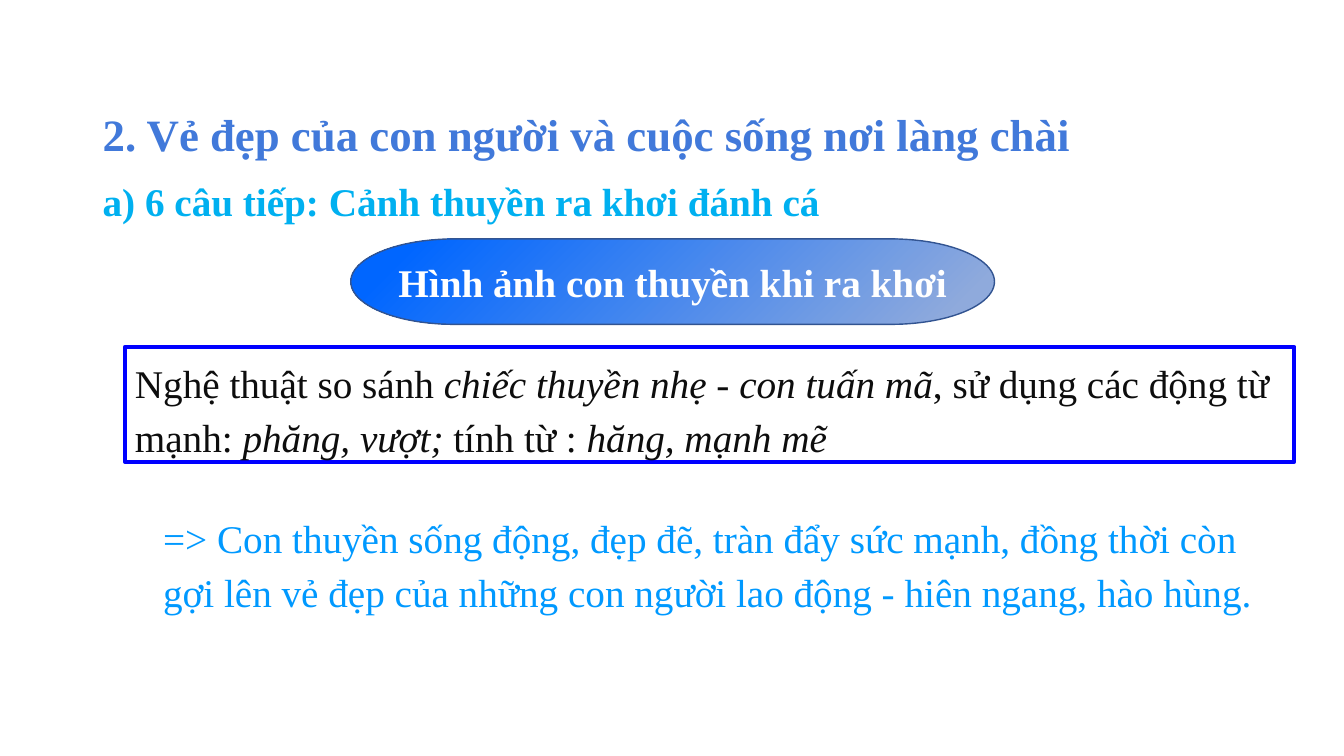
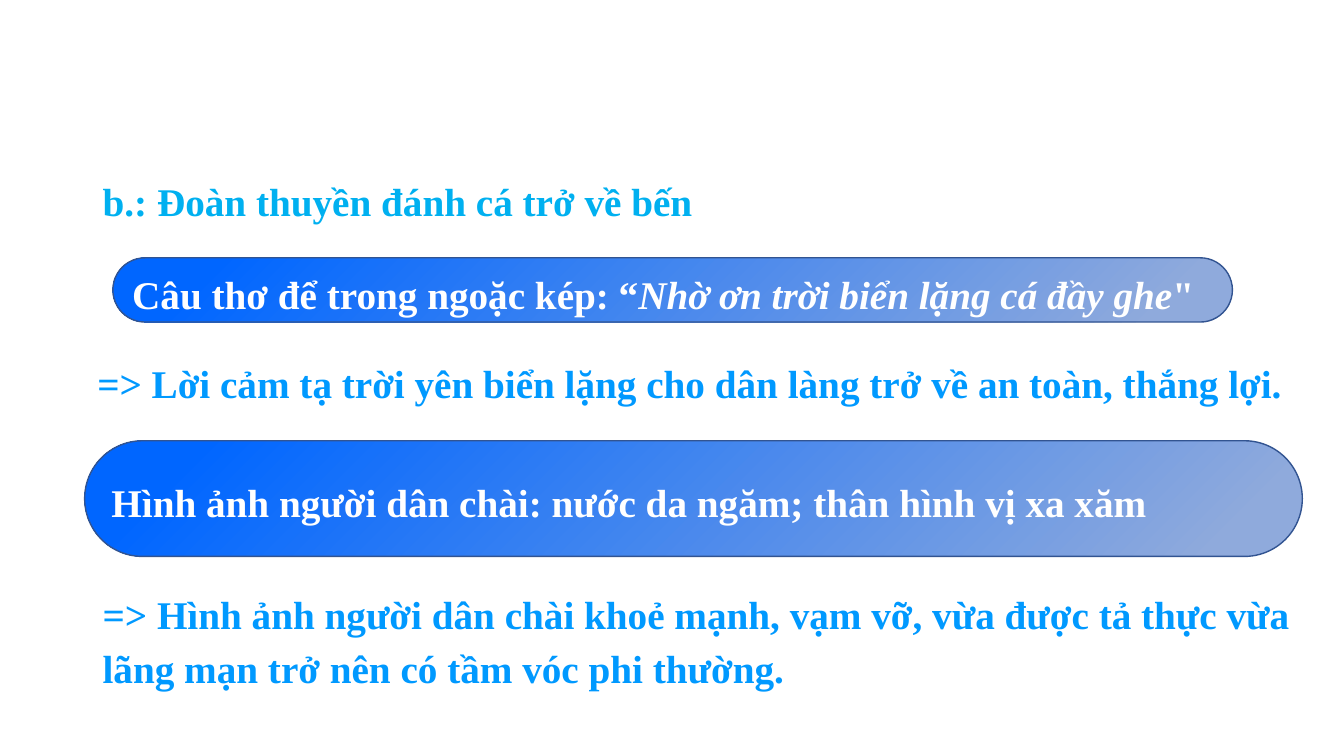
from pptx import Presentation
from pptx.dml.color import RGBColor
from pptx.enum.shapes import MSO_SHAPE
from pptx.enum.text import MSO_ANCHOR, PP_ALIGN
from pptx.util import Inches, Pt

RECT = MSO_SHAPE.RECTANGLE
ROUND = MSO_SHAPE.ROUNDED_RECTANGLE
TERMINATOR = MSO_SHAPE.FLOWCHART_TERMINATOR
LEFT, CENTER, JUSTIFY = PP_ALIGN.LEFT, PP_ALIGN.CENTER, PP_ALIGN.JUSTIFY
TOP, MIDDLE = MSO_ANCHOR.TOP, MSO_ANCHOR.MIDDLE


def rgb(value):
    return RGBColor.from_string(value)


class Deck:
    """Shared style and current slide; boxes are in percent of the slide."""

    FONT = "Times New Roman"
    TITLE, HEADING, RESULT = "4179DA", "00B0F0", "0099FF"
    INK, WHITE, FRAME, EDGE = "0D0D0D", "FFFFFF", "0000FF", "325491"
    GRADIENT = ((0.07, "8FAADC"), (0.91, "0066FF"))
    MARGIN = 6.9
    HEADING_TOP = 21.9

    def __init__(self):
        self.prs = Presentation()
        self.prs.slide_width = Inches(13.33)
        self.prs.slide_height = Inches(7.5)
        self.s = None

    def new_slide(self):
        self.s = self.prs.slides.add_slide(self.prs.slide_layouts[6])

    def box(self, x, y, w, h):
        width, height = self.prs.slide_width, self.prs.slide_height
        return [int(share * size / 100) for share, size in
                ((x, width), (y, height), (w, width), (h, height))]

    def add_text(self, sp, text, color, size=28, bold=True, align=LEFT,
                 anchor=TOP, spaced=True):
        """Fill a shape with one paragraph; *stars* enclose italics."""
        tf = sp.text_frame
        tf.word_wrap = True
        tf.vertical_anchor = anchor
        p = tf.paragraphs[0]
        p.alignment = align
        if spaced:
            p.line_spacing = 1.15
            p.space_before = p.space_after = Pt(6)
        for i, part in enumerate(text.split("*")):
            if part:
                r = p.add_run()
                r.text = part
                r.font.name = self.FONT
                r.font.size = Pt(size)
                r.font.bold = bold
                r.font.italic = i % 2 == 1
                r.font.color.rgb = rgb(color)

    def text(self, box, text, color, **style):
        sp = self.s.shapes.add_textbox(*self.box(*box))
        self.add_text(sp, text, color, **style)

    def title(self, text):
        self.text((self.MARGIN, 13.5, 74.8, 8.5), text, self.TITLE, size=32,
                  align=JUSTIFY, spaced=False)

    def heading(self, text):
        self.text((self.MARGIN, self.HEADING_TOP, 64.4, 8), text, self.HEADING)

    def result(self, box, text, bold=True):
        self.text(box, text, self.RESULT, bold=bold)

    def shape(self, kind, box, line, width):
        sp = self.s.shapes.add_shape(kind, *self.box(*box))
        sp.shadow.inherit = False
        sp.line.color.rgb = rgb(line)
        sp.line.width = Pt(width)
        return sp

    def frame(self, box, text):
        sp = self.shape(RECT, box, self.FRAME, 3)
        sp.fill.background()
        self.add_text(sp, text, self.INK, bold=False)

    def pill(self, box, text, kind=ROUND, **style):
        sp = self.shape(kind, box, self.EDGE, 1)
        if kind == ROUND:
            sp.adjustments[0] = 0.5
        sp.fill.gradient()
        sp.fill.gradient_angle = 135
        for stop, (position, color) in zip(sp.fill.gradient_stops, self.GRADIENT):
            stop.position = position
            stop.color.rgb = rgb(color)
        self.add_text(sp, text, self.WHITE, anchor=MIDDLE, **style)


def main():
    deck = Deck()

    # Slide 1: the boats set out
    deck.new_slide()
    deck.title("2. Vẻ đẹp của con người và cuộc sống nơi làng chài")
    deck.heading("a) 6 câu tiếp: Cảnh thuyền ra khơi đánh cá")
    deck.pill((26.1, 31.6, 47.9, 11.3), "Hình ảnh con thuyền khi ra khơi",
              kind=TERMINATOR, align=CENTER, spaced=False)
    deck.frame((9.3, 45.9, 87, 15.2),
               "Nghệ thuật so sánh *chiếc thuyền nhẹ - con tuấn mã*, sử dụng "
               "các động từ mạnh: *phăng, vượt; *tính từ : *hăng, mạnh mẽ*")
    deck.result((11.4, 66.4, 82.9, 15.7),
                "=> Con thuyền sống động, đẹp đẽ, tràn đẩy sức mạnh, đồng thời "
                "còn gợi lên vẻ đẹp của những con người lao động - hiên ngang, "
                "hào hùng.", bold=False)

    # Slide 2: the boats return
    deck.new_slide()
    deck.heading("b.: Đoàn thuyền đánh cá trở về bến")
    deck.pill((8.4, 34.1, 83.3, 8.5),
              "Câu thơ để trong ngoặc kép: “*Nhờ ơn trời biển lặng cá đầy ghe*\"")
    deck.result((6.5, 45.9, 90.6, 8),
                "=> Lời cảm tạ trời yên biển lặng cho dân làng trở về an toàn, "
                "thắng lợi.")
    deck.pill((6.3, 58.3, 90.6, 15.3),
              "Hình ảnh người dân chài: nước da ngăm; thân hình vị xa xăm")
    deck.result((deck.MARGIN, 76.5, 90.6, 15.2),
                "=> Hình ảnh người dân chài khoẻ mạnh, vạm vỡ, vừa được tả thực "
                "vừa lãng mạn trở nên có tầm vóc phi thường.")

    deck.prs.save("out.pptx")


if __name__ == "__main__":
    main()
